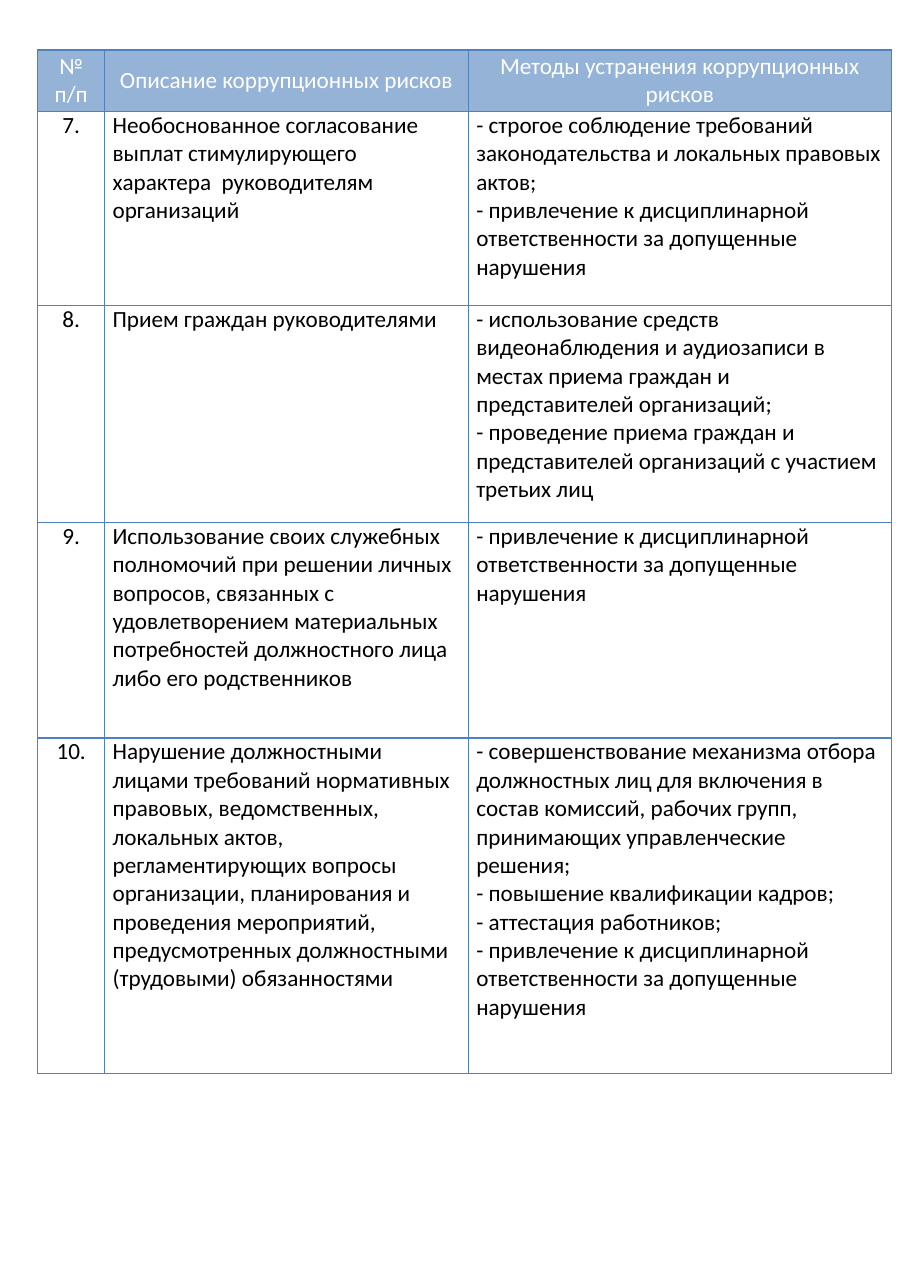
from dataclasses import dataclass

from lxml.etree import SubElement
from pptx import Presentation
from pptx.dml.color import RGBColor
from pptx.enum.text import MSO_ANCHOR, PP_ALIGN
from pptx.oxml.ns import qn
from pptx.table import _Cell
from pptx.util import Pt

FONT = "Calibri"
FONT_SIZE = 15
BORDER = "4F81BD"
HEADER_FILL = "95B3D7"
WHITE = "FFFFFF"
BLACK = "000000"

TABLE_LEFT, TABLE_TOP = 24.5, 32.4
COLUMN_WIDTHS = (43.2, 235.4, 273.8)
HEADER_HEIGHT = 39.6
HEADINGS = ("№ п/п", "Описание коррупционных рисков",
            "Методы устранения коррупционных рисков")
DISCIPLINE = "- привлечение к дисциплинарной ответственности за допущенные нарушения"


@dataclass(frozen=True)
class Risk:
    number: int
    height: float
    description: str
    methods: tuple[str, ...]


RISKS = (
    Risk(7, 125.6,
         "Необоснованное согласование выплат стимулирующего характера  "
         "руководителям организаций",
         ("- строгое соблюдение требований законодательства и локальных "
          "правовых актов;",
          DISCIPLINE)),
    Risk(8, 140.6,
         "Прием граждан руководителями",
         ("- использование средств видеонаблюдения и аудиозаписи в местах "
          "приема граждан и представителей организаций;",
          "- проведение приема граждан и представителей организаций с "
          "участием третьих лиц")),
    Risk(9, 139.5,
         "Использование своих служебных полномочий при решении личных "
         "вопросов, связанных с удовлетворением материальных потребностей "
         "должностного лица либо его родственников",
         (DISCIPLINE,)),
    Risk(10, 217.4,
         "Нарушение должностными лицами требований нормативных правовых, "
         "ведомственных, локальных актов, регламентирующих вопросы "
         "организации, планирования и проведения мероприятий, "
         "предусмотренных должностными (трудовыми) обязанностями",
         ("- совершенствование механизма отбора должностных лиц для "
          "включения в состав комиссий, рабочих групп, принимающих "
          "управленческие решения;",
          "- повышение квалификации кадров;",
          "- аттестация работников;",
          DISCIPLINE)),
)


def color(hex_code: str) -> RGBColor:
    return RGBColor.from_string(hex_code)


def add_borders(cell: _Cell) -> None:
    properties = cell._tc.get_or_add_tcPr()
    for side in ("a:lnL", "a:lnR", "a:lnT", "a:lnB"):
        line = SubElement(properties, qn(side), w=str(Pt(1)))
        fill = SubElement(line, qn("a:solidFill"))
        SubElement(fill, qn("a:srgbClr"), val=BORDER)


def fill_cell(cell: _Cell, lines: tuple[str, ...], header: bool, centered: bool) -> None:
    """Write one paragraph per line and format the cell."""
    add_borders(cell)
    if header:
        cell.fill.solid()
        cell.fill.fore_color.rgb = color(HEADER_FILL)
    else:
        cell.fill.background()
    cell.vertical_anchor = MSO_ANCHOR.MIDDLE if header else MSO_ANCHOR.TOP
    cell.margin_left = cell.margin_right = Pt(3 if centered else 5.2)
    cell.margin_top = cell.margin_bottom = Pt(0)
    cell.text = "\n".join(lines)
    for paragraph in cell.text_frame.paragraphs:
        paragraph.alignment = PP_ALIGN.CENTER if centered else PP_ALIGN.LEFT
        paragraph.font.name = FONT
        paragraph.font.size = Pt(FONT_SIZE)
        paragraph.font.color.rgb = color(WHITE if header else BLACK)


def main() -> None:
    presentation = Presentation()
    presentation.slide_width = Pt(595.44)
    presentation.slide_height = Pt(833.76)
    slide = presentation.slides.add_slide(presentation.slide_layouts[6])

    row_heights = (HEADER_HEIGHT, *(risk.height for risk in RISKS))
    risk_table = slide.shapes.add_table(
        len(row_heights), len(COLUMN_WIDTHS), Pt(TABLE_LEFT), Pt(TABLE_TOP),
        Pt(sum(COLUMN_WIDTHS)), Pt(sum(row_heights))).table
    risk_table.first_row = True
    risk_table.horz_banding = False
    for column, width in zip(risk_table.columns, COLUMN_WIDTHS):
        column.width = Pt(width)
    for row, height in zip(risk_table.rows, row_heights):
        row.height = Pt(height)

    for index, heading in enumerate(HEADINGS):
        heading_cell = risk_table.cell(0, index)
        fill_cell(heading_cell, (heading,), header=True, centered=True)
        heading_cell.text_frame.paragraphs[0].font.bold = False
        heading_cell.text_frame.paragraphs[0].runs[0].font.bold = False
    for row_index, risk in enumerate(RISKS, start=1):
        contents = ((f"{risk.number}.",), (risk.description,), risk.methods)
        for index, lines in enumerate(contents):
            fill_cell(risk_table.cell(row_index, index), lines,
                      header=False, centered=index == 0)

    presentation.save("out.pptx")


if __name__ == "__main__":
    main()
